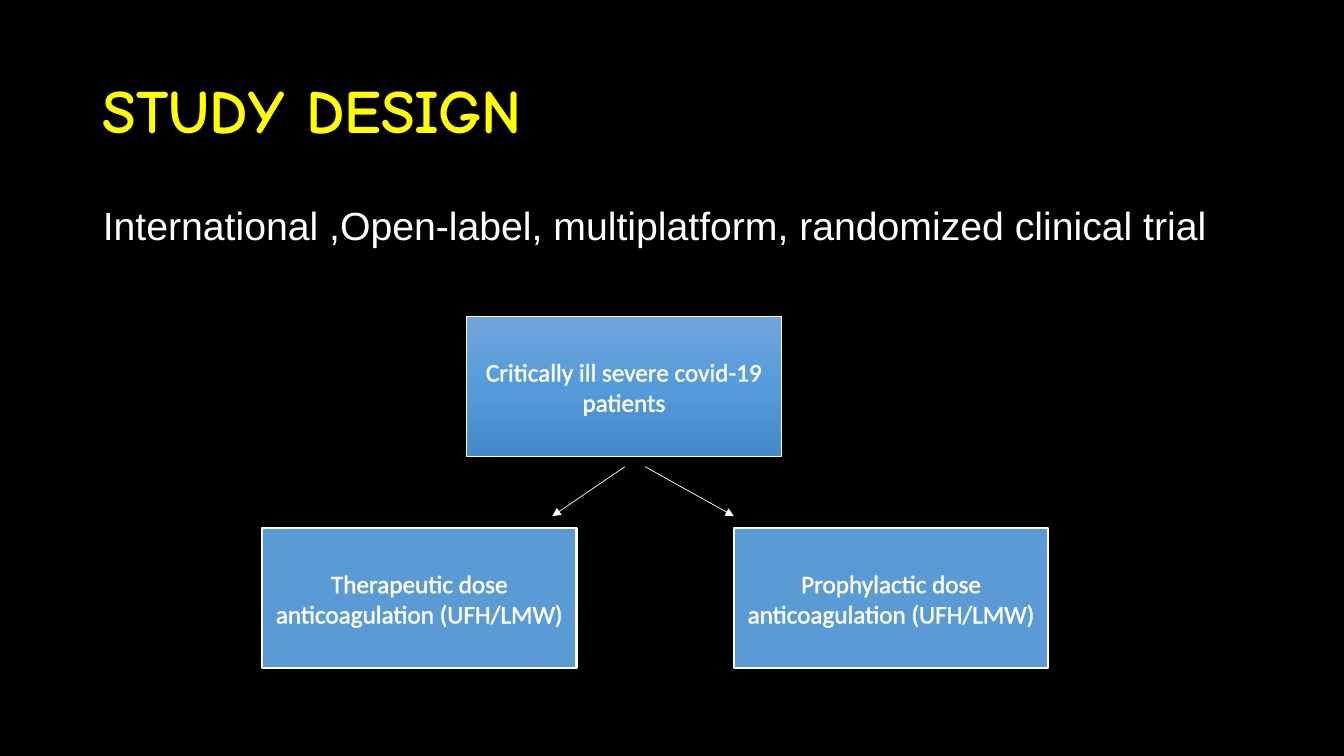
import copy
from dataclasses import dataclass

import lxml.etree
import pptx
import pptx.dml.color
import pptx.enum.dml
import pptx.enum.shapes
import pptx.enum.text
import pptx.oxml
import pptx.oxml.ns
import pptx.util

RGB = pptx.dml.color.RGBColor
BLACK = RGB(0x00, 0x00, 0x00)
WHITE = RGB(0xFF, 0xFF, 0xFF)
YELLOW = RGB(0xFF, 0xFF, 0x00)
BLUE = RGB(0x5B, 0x9B, 0xD5)
SHADES = (RGB(0x71, 0xA6, 0xDB), RGB(0x55, 0x9B, 0xDB), RGB(0x44, 0x8A, 0xCA))

WIDE = pptx.util.Inches(13.33)
HIGH = pptx.util.Inches(7.5)
BOX_W, BOX_H = 23.4, 18.53
ROW_TOP, ROW_LOW = 41.87, 69.87
TIP_TOP, TIP_LOW = 61.73, 68.27

ALIGN = pptx.enum.text.PP_ALIGN
ANCHOR = pptx.enum.text.MSO_ANCHOR
qn = pptx.oxml.ns.qn


@dataclass
class Box:
    text: str
    left: float
    top: float
    edge: float
    shades: tuple = ()


@dataclass
class Arrow:
    start: float
    end: float


BOXES = (
    Box("Therapeutic dose anticoagulation (UFH/LMW)", 19.5, ROW_LOW, 1.5),
    Box("Prophylactic dose anticoagulation (UFH/LMW)", 54.6, ROW_LOW, 1.5),
    Box("Critically ill severe covid-19 patients", 34.72, ROW_TOP, 0.5, SHADES),
)
ARROWS = (Arrow(48, 54.6), Arrow(46.5, 41.1))


def col(share: float) -> int:
    return round(WIDE * share / 100)


def row(share: float) -> int:
    return round(HIGH * share / 100)


def place(shape, left: float, top: float, width: float, height: float) -> None:
    shape.left, shape.top = col(left), row(top)
    shape.width, shape.height = col(width), row(height)


def write(shape, text: str, *, font: str, size: float, color=WHITE, bold=False,
          align=ALIGN.LEFT, anchor=ANCHOR.MIDDLE, space=1.0, gap=0, rim=0.0) -> None:
    frame = shape.text_frame
    frame.word_wrap = True
    frame.auto_size = pptx.enum.text.MSO_AUTO_SIZE.NONE
    frame.vertical_anchor = anchor
    para = frame.paragraphs[0]
    para.alignment = align
    para.line_spacing = space
    para.space_before = pptx.util.Pt(gap)
    run = para.add_run()
    run.text = text
    run.font.name = font
    run.font.size = pptx.util.Pt(size)
    run.font.bold = bold
    run.font.color.rgb = color
    if rim:
        props = run.font.fill._xPr
        line = lxml.etree.Element(qn("a:ln"), w=str(pptx.util.Pt(rim)))
        line.append(copy.deepcopy(props.find(qn("a:solidFill"))))
        props.insert(0, line)


def shade(fill, tones: tuple) -> None:
    fill.gradient()
    fill.gradient_angle = 270
    stops = fill._xPr.find(qn("a:gradFill")).find(qn("a:gsLst"))
    stops.insert(1, copy.deepcopy(stops[0]))
    for index, (stop, tone) in enumerate(zip(fill.gradient_stops, tones)):
        stop.color.rgb = tone
        stop.position = index / (len(tones) - 1)


def draw_box(slide, box: Box) -> None:
    shape = slide.shapes.add_shape(
        pptx.enum.shapes.MSO_SHAPE.RECTANGLE,
        col(box.left), row(box.top), col(BOX_W), row(BOX_H))
    shape.shadow.inherit = False
    if box.shades:
        shade(shape.fill, box.shades)
    else:
        shape.fill.solid()
        shape.fill.fore_color.rgb = BLUE
    shape.line.color.rgb = WHITE
    shape.line.width = pptx.util.Pt(box.edge)
    write(shape, box.text, font="Calibri", size=18, align=ALIGN.CENTER, rim=0.75)


def draw_arrow(slide, arrow: Arrow) -> None:
    link = slide.shapes.add_connector(
        pptx.enum.shapes.MSO_CONNECTOR.STRAIGHT,
        col(arrow.start), row(TIP_TOP), col(arrow.end), row(TIP_LOW))
    link.line.color.rgb = WHITE
    link.line.width = pptx.util.Pt(0.5)
    props = link._element.spPr
    lxml.etree.SubElement(props.find(qn("a:ln")), qn("a:tailEnd"), type="triangle")
    lxml.etree.SubElement(props, qn("a:effectLst"))


def main() -> None:
    deck = pptx.Presentation()
    deck.slide_width, deck.slide_height = WIDE, HIGH
    slide = deck.slides.add_slide(deck.slide_layouts[1])
    slide.background.fill.solid()
    slide.background.fill.fore_color.rgb = BLACK

    title, body = slide.placeholders
    place(title, 6.9, 5.33, 86.25, 19.33)
    write(title, "STUDY DESIGN", font="Comic Neue", size=44, color=YELLOW,
          bold=True, space=0.9)
    place(body, 6.9, 26.67, 87.52, 9.47)
    write(body, "International ,Open-label, multiplatform, randomized clinical trial",
          font="Arial", size=28, anchor=ANCHOR.TOP, space=0.9, gap=10)
    props = body.text_frame.paragraphs[0]._p.get_or_add_pPr()
    props.set("marL", "0")
    props.set("indent", "0")
    lxml.etree.SubElement(props, qn("a:buNone"))

    for box in BOXES:
        draw_box(slide, box)
    for arrow in ARROWS:
        draw_arrow(slide, arrow)
    deck.save("out.pptx")


if __name__ == "__main__":
    main()
